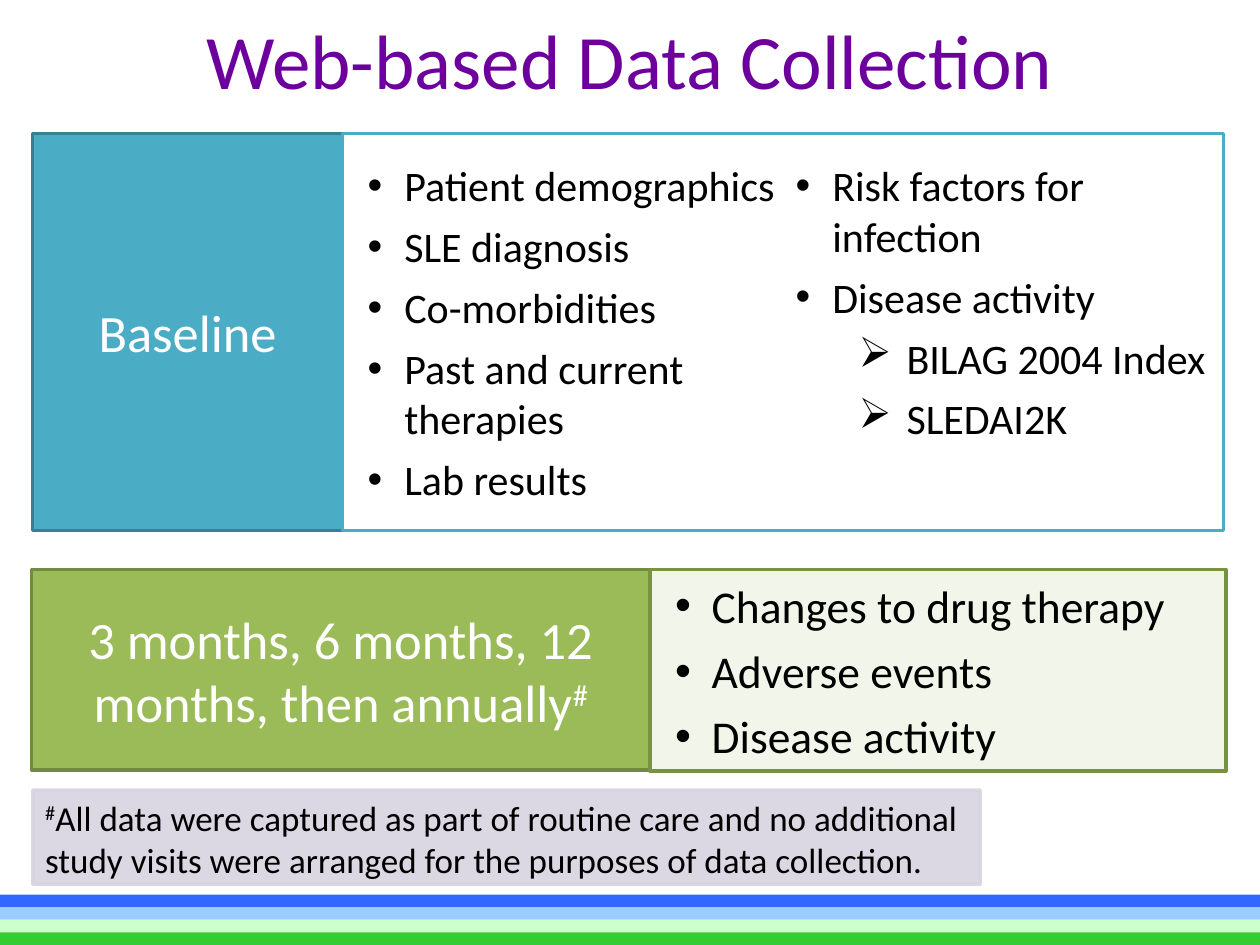
from dataclasses import dataclass

from lxml.etree import SubElement
from pptx import Presentation
from pptx.dml.color import RGBColor
from pptx.enum.shapes import MSO_SHAPE
from pptx.enum.text import MSO_ANCHOR, PP_ALIGN
from pptx.oxml.ns import qn
from pptx.util import Inches, Pt


@dataclass(frozen=True)
class Theme:
    font: str = "Calibri"
    title: str = "6D009D"
    dark: str = "000000"
    light: str = "FFFFFF"
    baseline: str = "4BACC6"
    baseline_edge: str = "377F92"
    follow_up: str = "9BBB59"
    follow_up_edge: str = "738A42"
    follow_up_panel: str = "F2F6EA"
    follow_up_panel_edge: str = "77933C"
    note: str = "D8D3E0"
    stripes: tuple = ("3366FF", "99CCFF", "CCFFCC", "33CC33")
    title_size: int = 44
    label_size: int = 30
    follow_up_size: int = 26
    baseline_size: int = 24
    note_size: int = 20


theme = Theme()
presentation = Presentation()
presentation.slide_width = Inches(10)
presentation.slide_height = Inches(7.5)
slide = presentation.slides.add_slide(presentation.slide_layouts[6])


def add_box(left, top, width, height, fill, edge=None):
    shape = slide.shapes.add_shape(
        MSO_SHAPE.RECTANGLE, Inches(left), Inches(top), Inches(width), Inches(height))
    shape.shadow.inherit = False
    shape.fill.solid()
    shape.fill.fore_color.rgb = RGBColor.from_string(fill)
    if edge:
        shape.line.color.rgb = RGBColor.from_string(edge)
        shape.line.width = Pt(2)
    else:
        shape.line.fill.background()
    shape.text_frame.vertical_anchor = MSO_ANCHOR.MIDDLE
    return shape


def write(paragraph, text, size, color, alignment=PP_ALIGN.LEFT):
    """Fill a paragraph, raising every # as a footnote mark."""
    paragraph.alignment = alignment
    paragraph.font.name = theme.font
    paragraph.font.size = Pt(size)
    paragraph.font.color.rgb = RGBColor.from_string(color)
    before, mark, after = text.partition("#")
    for part in filter(None, (before, mark, after)):
        run = paragraph.add_run()
        run.text = part
        if part == "#":
            run.font._element.set("baseline", "30000")


# Footer stripes
stripe_height = 0.1
for index, color in enumerate(theme.stripes):
    add_box(0, 7.1 + index * stripe_height, 10, stripe_height, color)

# Title
title = slide.shapes.add_textbox(Inches(0.5), Inches(0.05), Inches(9), Inches(1.25))
title.text_frame.word_wrap = True
write(title.text_frame.paragraphs[0], "Web-based Data Collection",
      theme.title_size, theme.title, PP_ALIGN.CENTER)

# Footnote
note = add_box(0.26, 6.27, 7.52, 0.75, theme.note, theme.note)
note.text_frame.vertical_anchor = MSO_ANCHOR.TOP
write(note.text_frame.paragraphs[0],
      "#All data were captured as part of routine care and no additional "
      "study visits were arranged for the purposes of data collection.",
      theme.note_size, theme.dark)
for color in note._element.spPr.iter(qn("a:srgbClr")):
    SubElement(color, qn("a:alpha"), val="90000")

# Visit labels
labels = [
    ("Baseline", (0.26, 1.06, 2.46, 3.15), theme.baseline, theme.baseline_edge),
    ("3 months, 6 months, 12 months, then annually#", (0.25, 4.52, 4.91, 1.59),
     theme.follow_up, theme.follow_up_edge),
]
for text, place, fill, edge in labels:
    label = add_box(*place, fill, edge)
    write(label.text_frame.paragraphs[0], text,
          theme.label_size, theme.light, PP_ALIGN.CENTER)

# Data collected at each visit: (level, text) items
panels = [
    ((2.72, 1.06, 6.99, 3.15), theme.light, theme.baseline, theme.baseline_size, 2, [
        (0, "Patient demographics"),
        (0, "SLE diagnosis"),
        (0, "Co-morbidities"),
        (0, "Past and current therapies"),
        (0, "Lab results"),
        (0, "Risk factors for infection"),
        (0, "Disease activity"),
        (2, "BILAG 2004 Index"),
        (2, "SLEDAI2K"),
    ]),
    ((5.16, 4.52, 4.57, 1.6), theme.follow_up_panel, theme.follow_up_panel_edge,
     theme.follow_up_size, 1, [
        (0, "Changes to drug therapy"),
        (0, "Adverse events"),
        (0, "Disease activity"),
    ]),
]
bullet_styles = {0: ("•", "Arial", 0.39, -0.29), 2: ("➢", "Wingdings", 0.98, -0.38)}
for place, fill, edge, size, columns, items in panels:
    frame = add_box(*place, fill, edge).text_frame
    frame._txBody.bodyPr.set("numCol", str(columns))
    for index, (level, text) in enumerate(items):
        paragraph = frame.add_paragraph() if index else frame.paragraphs[0]
        paragraph.level = level
        paragraph.space_after = Pt(6)
        symbol, symbol_font, margin, indent = bullet_styles[level]
        properties = paragraph._p.get_or_add_pPr()
        properties.set("marL", str(Inches(margin)))
        properties.set("indent", str(Inches(indent)))
        if symbol_font == "Arial":
            SubElement(properties, qn("a:buFont"), typeface=symbol_font)
        SubElement(properties, qn("a:buChar"), char=symbol)
        write(paragraph, text, size, theme.dark)

presentation.save("out.pptx")
